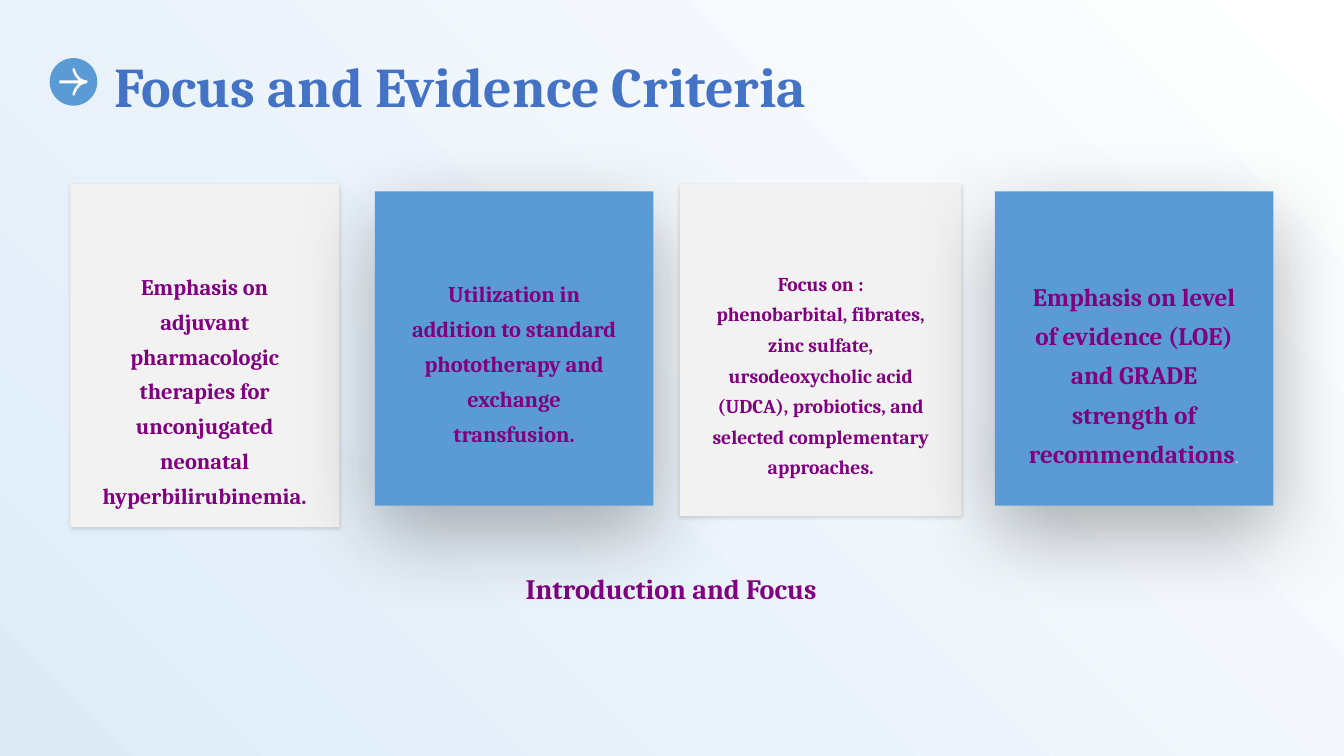
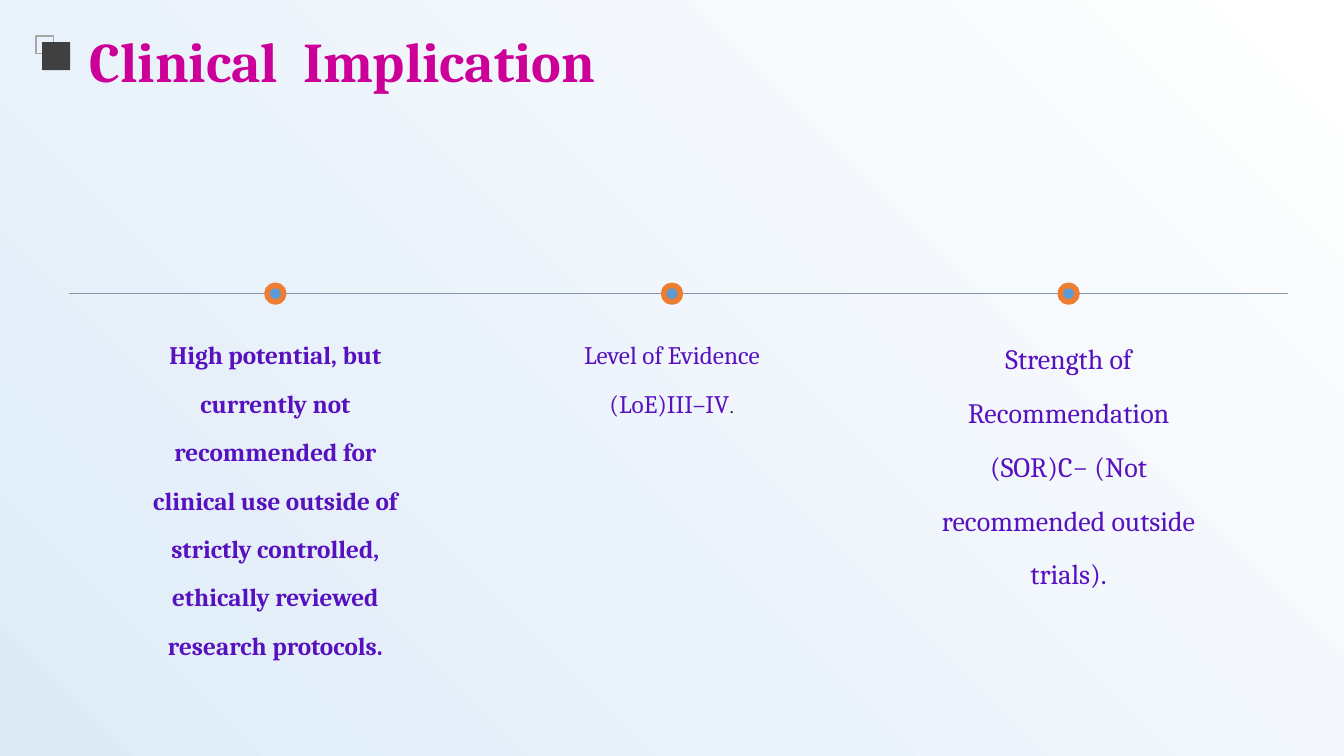
from dataclasses import dataclass

from lxml.etree import SubElement
from pptx import Presentation
from pptx.dml.color import RGBColor
from pptx.enum.shapes import MSO_CONNECTOR, MSO_SHAPE
from pptx.enum.text import MSO_ANCHOR, PP_ALIGN
from pptx.oxml.ns import qn
from pptx.util import Pt

WHITE = RGBColor(0xFF, 0xFF, 0xFF)
BLACK = RGBColor(0x00, 0x00, 0x00)
PALE_BLUE = RGBColor(0xDE, 0xEB, 0xF7)
BLUE = RGBColor(0x5B, 0x9B, 0xD5)
TITLE_BLUE = RGBColor(0x44, 0x72, 0xC4)
MAGENTA = RGBColor(0xCC, 0x00, 0x99)
PURPLE = RGBColor(0x80, 0x00, 0x80)
VIOLET = RGBColor(0x57, 0x11, 0xBF)
ORANGE = RGBColor(0xED, 0x7D, 0x31)
LIGHT_GRAY = RGBColor(0xF2, 0xF2, 0xF2)
MID_GRAY = RGBColor(0xA6, 0xA6, 0xA6)
DARK_GRAY = RGBColor(0x40, 0x40, 0x40)
LINE_GRAY = RGBColor(0x84, 0x97, 0xB0)

SLIDE_WIDTH, SLIDE_HEIGHT = 960, 540
MAIN_FONT, STOP_FONT = "Cambria", "Manrope"


@dataclass
class TextStyle:
    size: float
    color: RGBColor
    bold: bool = True
    spacing: float = 1.3
    align: PP_ALIGN = PP_ALIGN.CENTER
    anchor: MSO_ANCHOR = MSO_ANCHOR.TOP
    insets: tuple = (7.2, 3.6, 7.2, 3.6)
    tab_stop: float = 0


@dataclass
class Shadow:
    opacity: int
    blur: float
    distance: float


SOFT_SHADOW = Shadow(15, 3, 1)
DEEP_SHADOW = Shadow(30, 60, 20)


def set_font(font, name, size, color, bold):
    font.name, font.size, font.bold = name, Pt(size), bold
    font.color.rgb = color


def write_text(shape, paragraphs, style):
    """Fill the shape with one styled paragraph per string."""
    frame = shape.text_frame
    frame.word_wrap = True
    frame.vertical_anchor = style.anchor
    (frame.margin_left, frame.margin_top,
     frame.margin_right, frame.margin_bottom) = map(Pt, style.insets)
    for index, text in enumerate(paragraphs):
        paragraph = frame.add_paragraph() if index else frame.paragraphs[0]
        paragraph.alignment = style.align
        paragraph.line_spacing = style.spacing
        if style.tab_stop:
            tabs = SubElement(paragraph._p.get_or_add_pPr(), qn("a:tabLst"))
            SubElement(tabs, qn("a:tab"), pos=str(Pt(style.tab_stop)), algn="l")
        set_font(paragraph.font, MAIN_FONT, style.size, style.color, style.bold)
        paragraph.add_run().text = text
    return frame


def add_full_stop(frame, size, color):
    """End the last paragraph with a small full stop in the second font."""
    run = frame.paragraphs[-1].add_run()
    run.text = "."
    set_font(run.font, STOP_FONT, size, color, False)


def add_text(slide, left, top, width, height, paragraphs, style):
    box = slide.shapes.add_textbox(Pt(left), Pt(top), Pt(width), Pt(height))
    return write_text(box, paragraphs, style)


def paint(shape, fill=None, line=None, line_width=1):
    shape.shadow.inherit = False
    if fill is None:
        shape.fill.background()
    else:
        shape.fill.solid()
        shape.fill.fore_color.rgb = fill
    if line is None:
        shape.line.fill.background()
    else:
        shape.line.color.rgb = line
        shape.line.width = Pt(line_width)
    return shape


def add_shape(slide, kind, left, top, width, height, **colors):
    shape = slide.shapes.add_shape(kind, Pt(left), Pt(top), Pt(width), Pt(height))
    return paint(shape, **colors)


def cast_shadow(shape, shadow):
    """Drop a black shadow straight down from the shape."""
    effects = shape._element.spPr.find(qn("a:effectLst"))
    outer = SubElement(effects, qn("a:outerShdw"), blurRad=str(Pt(shadow.blur)),
                       dist=str(Pt(shadow.distance)), dir="5400000",
                       algn="t", rotWithShape="0")
    color = SubElement(outer, qn("a:srgbClr"), val=str(BLACK))
    SubElement(color, qn("a:alpha"), val=str(shadow.opacity * 1000))


def set_background(presentation):
    fill = presentation.slide_master.background.fill
    fill.gradient()
    fill.gradient_angle = 225
    for stop, color in zip(fill.gradient_stops, (WHITE, PALE_BLUE)):
        stop.color.rgb = color


def add_title(slide, left, top, text, color, spacing, tab_stop=0):
    style = TextStyle(40, color, spacing=spacing, align=PP_ALIGN.LEFT,
                      anchor=MSO_ANCHOR.MIDDLE, insets=(0, 0, 0, 0),
                      tab_stop=tab_stop)
    add_text(slide, left, top, 840, 34, [text], style)


def add_arrow_badge(slide, left, top, size):
    """White arrow with curved barbs on a blue disc."""
    add_shape(slide, MSO_SHAPE.OVAL, left, top, size, size, fill=BLUE)
    upper_half = [(0, 1), (13.7, 1), (10.8, 4.7), (9.4, 8.3), (9.4, 9.7),
                  (10.8, 9.7), (11.5, 7.6), (13, 4.7), (15.1, 2.5),
                  (18, 1.2), (20, 1)]
    outline = upper_half + [(x, -y) for x, y in reversed(upper_half)]
    unit = size / 34
    points = [(Pt(left + (7 + x) * unit), Pt(top + (17 - y) * unit))
              for x, y in outline]
    builder = slide.shapes.build_freeform(*points[0])
    builder.add_line_segments(points[1:], close=True)
    paint(builder.convert_to_shape(), fill=WHITE)


def add_square_badge(slide, left, top):
    add_shape(slide, MSO_SHAPE.RECTANGLE, left, top, 12.5, 12.5, line=MID_GRAY)
    add_shape(slide, MSO_SHAPE.RECTANGLE, left + 4.5, top + 4.5, 20, 20,
              fill=DARK_GRAY)


def add_card(slide, left, top, width, height, paragraphs, size, fill, shadow):
    card = add_shape(slide, MSO_SHAPE.RECTANGLE, left, top, width, height, fill=fill)
    cast_shadow(card, shadow)
    style = TextStyle(size, PURPLE, insets=(21.6, 57.6, 21.6, 3.6))
    return write_text(card, paragraphs, style)


def add_milestone(slide, center, axis, text, size, bold):
    """Ringed dot on the axis with its text below."""
    dot, width = 12, 204
    add_shape(slide, MSO_SHAPE.OVAL, center - dot / 2, axis - dot / 2, dot, dot,
              fill=BLUE, line=ORANGE, line_width=4)
    style = TextStyle(size, VIOLET, bold, spacing=1.6, insets=(5, 3, 5, 3))
    return add_text(slide, center - width / 2, axis + 17, width, 195, [text], style)


def add_axis(slide, left, right, top):
    axis = slide.shapes.add_connector(MSO_CONNECTOR.STRAIGHT, Pt(left), Pt(top),
                                      Pt(right), Pt(top))
    axis.line.color.rgb = LINE_GRAY
    axis.line.width = Pt(0.75)
    SubElement(axis._element.spPr, qn("a:effectLst"))


def build_criteria_slide(slide):
    add_text(slide, 52, 397.5, 855, 50, ["Introduction and Focus"],
             TextStyle(20, PURPLE))
    gray, blue = (LIGHT_GRAY, SOFT_SHADOW), (BLUE, DEEP_SHADOW)
    cards = [
        (50.2, 131.5, 192, 245, gray, 16,
         ["Emphasis on adjuvant pharmacologic therapies for unconjugated "
          "neonatal hyperbilirubinemia."]),
        (267.8, 136.8, 199, 224.5, blue, 16,
         ["Utilization in addition to standard phototherapy and exchange "
          "transfusion."]),
        (485.8, 131.5, 201, 237, gray, 14,
         ["Focus on :",
          "phenobarbital, fibrates, zinc sulfate, ursodeoxycholic acid (UDCA), "
          "probiotics, and selected complementary approaches."]),
        (710.6, 136.8, 199, 224.5, blue, 18,
         ["Emphasis on level of evidence (LOE) and GRADE strength of "
          "recommendations"]),
    ]
    for left, top, width, height, look, size, paragraphs in cards:
        frame = add_card(slide, left, top, width, height, paragraphs, size, *look)
    add_full_stop(frame, 12, WHITE)
    add_title(slide, 82, 41.5, "Focus and Evidence Criteria", TITLE_BLUE, 1.1)
    add_arrow_badge(slide, 35.5, 41.5, 34)


def build_implication_slide(slide):
    axis, pitch = 209.75, 283.3
    add_axis(slide, 49, 920, axis)
    milestones = [
        ("High potential, but currently not recommended for clinical use outside "
         "of strictly controlled, ethically reviewed research protocols.", 18, True),
        ("Level of Evidence (LoE)III–IV", 18, False),
        ("Strength of Recommendation (SOR)C− (Not recommended outside trials).",
         20, False),
    ]
    frames = [add_milestone(slide, SLIDE_WIDTH / 2 + (index - 1) * pitch, axis,
                            *milestone)
              for index, milestone in enumerate(milestones)]
    add_full_stop(frames[1], 15, BLACK)
    add_title(slide, 64, 21, "Clinical\tImplication", MAGENTA, 1.2, tab_stop=152.5)
    add_square_badge(slide, 25.7, 25.7)


def main():
    presentation = Presentation()
    presentation.slide_width = Pt(SLIDE_WIDTH)
    presentation.slide_height = Pt(SLIDE_HEIGHT)
    set_background(presentation)
    blank = presentation.slide_layouts[6]
    for build in (build_criteria_slide, build_implication_slide):
        build(presentation.slides.add_slide(blank))
    presentation.save("out.pptx")


if __name__ == "__main__":
    main()
